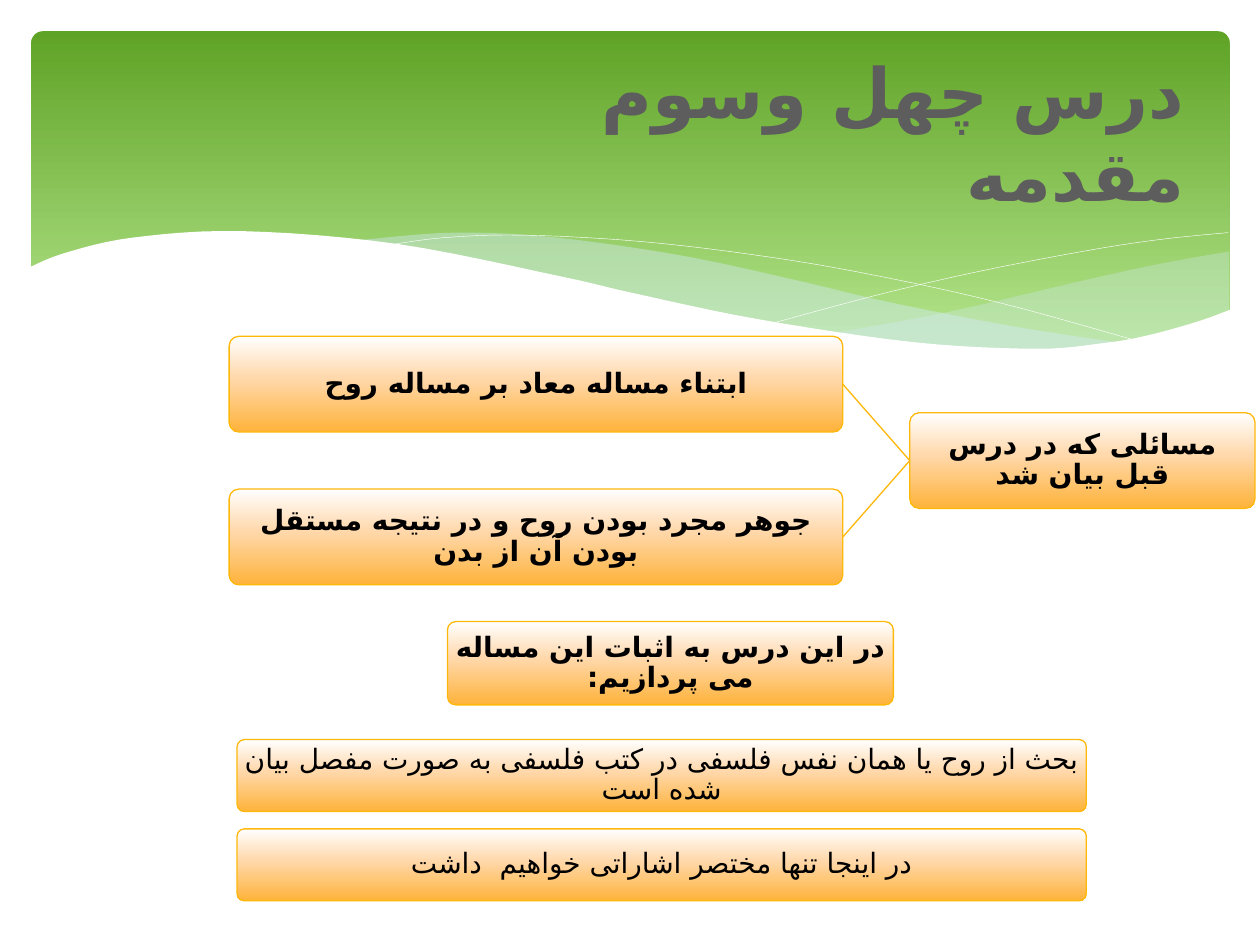
from dataclasses import dataclass
from typing import NamedTuple

from lxml.etree import SubElement
from pptx import Presentation
from pptx.dml.color import RGBColor
from pptx.enum.shapes import MSO_CONNECTOR as Link, MSO_SHAPE as Preset
from pptx.enum.text import MSO_ANCHOR as Anchor, PP_ALIGN as Align
from pptx.oxml import parse_xml
from pptx.oxml.ns import nsdecls, qn
from pptx.util import Cm, Pt


class Box(NamedTuple):
    """A rectangle in centimetres."""
    left: float
    top: float
    width: float
    height: float

    def inner(self, left, top, width, height):
        """Return a box placed relative to this one."""
        return Box(self.left + left, self.top + top, width, height)

    def lengths(self):
        """Return the four lengths for python-pptx."""
        return [Cm(value) for value in self]


@dataclass(frozen=True)
class Theme:
    """Colours, fonts and sizes of the deck."""
    font: str = "Cabin"
    persian_font: str = "DejaVu Sans"
    title_size: float = 39.6
    card_size: float = 16
    title: str = "5D5D5D"
    ink: str = "000000"
    white: str = "FFFFFF"
    mist: str = "D6ECFF"
    gold: str = "FEB80A"
    band: tuple = ((0, "5FA326"), (90, "B2E389"))
    card: tuple = ((0, "FFFFFF"), (44, "FFD8AB"), (100, "FEB33B"))


THEME = Theme()

RIGHT_MIST = (
    [(24.15, 4.44), (22.75, 4.69), (21.23, 5.02), (18.49, 5.66), (16.15, 6.09)],
    [(16.15, 6.09), (17.62, 6.27), (19.76, 6.42), (21.51, 6.32), (22.93, 6.04), (24.15, 5.63)],
)
MIDDLE_MIST = (
    [(22.04, 6.29), (19.86, 5.96), (17.29, 5.46), (15.34, 5), (13.1, 4.52),
     (10.59, 4.16), (8.53, 4.06), (6.62, 4.21)],
    [(6.62, 4.21), (8.55, 4.52), (10.76, 5), (13.74, 5.66), (16.63, 6.17),
     (18.69, 6.4), (20.39, 6.42), (22.04, 6.29)],
)
FALLING_LINE = (
    [(7.21, 4.31), (8.33, 4.16), (9.93, 4.11), (12.31, 4.24), (14.8, 4.54),
     (17.01, 4.92), (19.55, 5.48), (22.4, 6.27)],
)
RISING_LINE = (
    [(14.93, 5.89), (17.01, 5.33), (19.07, 4.85), (21.36, 4.41), (22.83, 4.19), (24.13, 4.06)],
)
WHITE_WAVE = (
    [(24.18, 5.61), (23.49, 5.86), (22.47, 6.14), (21.59, 6.29), (20.26, 6.4),
     (17.8, 6.27), (14.68, 5.81), (12.14, 5.28), (10.71, 4.95), (7.39, 4.29),
     (4.26, 4.03), (2.05, 4.16), (0.68, 4.47), (-0.06, 4.77)],
    [(-0.06, 7.72), (24.18, 7.72)],
)


def smooth(knots, steps=6):
    """Return points of a Catmull-Rom curve through the knots."""
    padded = [knots[0], *knots, knots[-1]]
    points = [knots[0]]
    for a, b, c, d in zip(padded, padded[1:], padded[2:], padded[3:]):
        for step in range(1, steps + 1):
            t = step / steps
            points.append(tuple(
                0.5 * (2 * q + (r - p) * t + (2 * p - 5 * q + 4 * r - s) * t ** 2
                       + (3 * q - p - 3 * r + s) * t ** 3)
                for p, q, r, s in zip(a, b, c, d)))
    return points


def paint_gradient(shape, stops):
    """Fill a shape with a top-down gradient."""
    shape.fill.background()
    marks = "".join(f'<a:gs pos="{place * 1000}"><a:srgbClr val="{color}"/></a:gs>'
                    for place, color in stops)
    gradient = parse_xml(f'<a:gradFill {nsdecls("a")} rotWithShape="1"><a:gsLst>{marks}</a:gsLst>'
                         '<a:lin ang="5400000" scaled="0"/></a:gradFill>')
    props = shape.element.spPr
    props.replace(props.find(qn("a:noFill")), gradient)


def add_rounded(page, box, stops, radius):
    """Add a rounded rectangle with a gradient and no line."""
    shape = page.shapes.add_shape(Preset.ROUNDED_RECTANGLE, *box.lengths())
    shape.shadow.inherit = False
    shape.adjustments[0] = radius
    paint_gradient(shape, stops)
    shape.line.fill.background()
    return shape


def add_wave(page, box, curves, fill=None, alpha=100):
    """Add a filled wave, or a thin white line when no fill is given."""
    points = [(Cm(box.left + x), Cm(box.top + y)) for curve in curves for x, y in smooth(curve)]
    builder = page.shapes.build_freeform(*points[0])
    builder.add_line_segments(points[1:], close=fill is not None)
    wave = builder.convert_to_shape()
    wave.shadow.inherit = False
    if fill is None:
        wave.fill.background()
        wave.line.color.rgb = RGBColor.from_string(THEME.white)
        wave.line.width = Pt(0.25)
        return
    wave.fill.solid()
    wave.fill.fore_color.rgb = RGBColor.from_string(fill)
    wave.line.fill.background()
    if alpha < 100:
        color = wave.element.spPr.find(qn("a:solidFill"))[0]
        SubElement(color, qn("a:alpha")).set("val", str(alpha * 1000))


def write_text(frame, lines, size, color, bold, align, inset):
    """Write right-to-left lines as one centred-in-height paragraph."""
    frame.word_wrap = True
    frame.vertical_anchor = Anchor.MIDDLE
    frame.margin_left = frame.margin_right = Cm(inset[0])
    frame.margin_top = frame.margin_bottom = Cm(inset[1])
    para = frame.paragraphs[0]
    para.alignment = align
    para._p.get_or_add_pPr().set("rtl", "1")
    for index, line in enumerate(lines):
        if index:
            para.add_line_break()
        span = para.add_run()
        span.text = line
        span.font.name = THEME.font
        span.font.size = Pt(size)
        span.font.bold = bold
        span.font.color.rgb = RGBColor.from_string(color)
        SubElement(span.font._element, qn("a:cs")).set("typeface", THEME.persian_font)
    return para


def add_header(page, box):
    """Draw the green band, its waves and the title."""
    add_rounded(page, box, THEME.band, 0.034)
    add_wave(page, box, RIGHT_MIST, THEME.mist, 29)
    add_wave(page, box, MIDDLE_MIST, THEME.mist, 40)
    add_wave(page, box, FALLING_LINE)
    add_wave(page, box, RISING_LINE)
    add_wave(page, box, WHITE_WAVE, THEME.white)
    title = page.shapes.add_textbox(*box.inner(0.63, 0.3, 22.86, 3.48).lengths())
    write_text(title.text_frame, ["درس چهل وسوم", "مقدمه"], THEME.title_size,
               THEME.title, True, Align.RIGHT, (0.25, 0.13))


def add_card(page, box, text, bold=True):
    """Add one golden card with centred text."""
    card = add_rounded(page, box, THEME.card, 0.1)
    card.line.color.rgb = RGBColor.from_string(THEME.gold)
    card.line.width = Pt(0.75)
    para = write_text(card.text_frame, [text], THEME.card_size, THEME.ink, bold,
                      Align.CENTER, (0.09, 0.09))
    para.line_spacing = 0.9
    return card


def add_branches(page, box, root_text, branch_texts):
    """Draw a root card on the right joined to its branch cards."""
    height, pitch = 1.93, 3.08
    middle = pitch * (len(branch_texts) - 1) / 2
    root = add_card(page, box.inner(box.width - 6.96, middle, 6.96, height), root_text)
    for row, text in enumerate(branch_texts):
        branch = add_card(page, box.inner(0, row * pitch, 12.37, height), text)
        link = page.shapes.add_connector(Link.STRAIGHT, 0, 0, 0, 0)
        link.begin_connect(root, 1)
        link.end_connect(branch, 3)
        link.line.color.rgb = RGBColor.from_string(THEME.gold)
        link.line.width = Pt(0.75)
        SubElement(link._element.spPr, qn("a:effectLst"))


def add_outline(page, box, heading, details):
    """Draw a heading card above a stack of detail cards."""
    add_card(page, box.inner(4.24, 0, 8.99, 1.68), heading)
    for row, text in enumerate(details):
        add_card(page, box.inner(0, 2.38 + 1.8 * row, box.width, 1.45), text, bold=False)


def main():
    """Build and save the deck."""
    deck = Presentation()
    deck.slide_width, deck.slide_height = Cm(25.4), Cm(19.05)
    page = deck.slides.add_slide(deck.slide_layouts[6])
    add_header(page, Box(0.63, 0.63, 24.16, 6.86))
    add_branches(page, Box(4.62, 6.78, 20.68, 5.01), "مسائلی که در درس قبل بیان شد",
                 ["ابتناء مساله معاد بر مساله روح",
                  "جوهر مجرد بودن روح و در نتیجه مستقل بودن آن از بدن"])
    add_outline(page, Box(4.78, 12.53, 17.12, 5.63), "در این درس به اثبات این مساله می پردازیم:",
                ["بحث از روح یا همان نفس فلسفی در کتب فلسفی به صورت مفصل بیان شده است",
                 "در اینجا تنها مختصر اشاراتی خواهیم  داشت"])
    deck.save("out.pptx")


if __name__ == "__main__":
    main()
